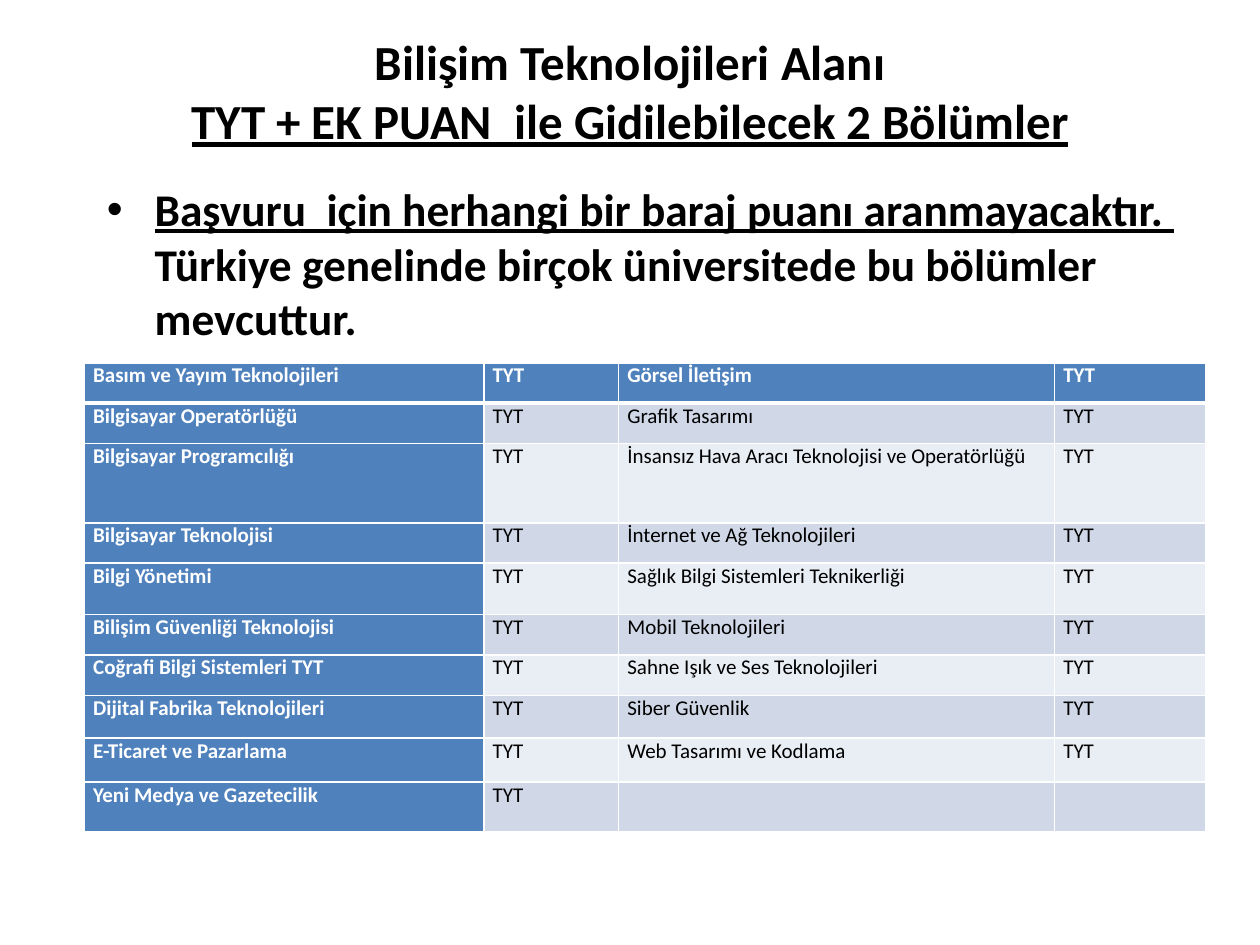
from lxml import etree
from pptx import Presentation, util as u
from pptx.dml.color import RGBColor
from pptx.enum import text
from pptx.oxml.ns import qn

# Content
TITLE = [("Bilişim Teknolojileri Alanı", False),
         ("TYT + EK PUAN  ile Gidilebilecek 2 Bölümler", True)]
NOTICE = [("Başvuru  için herhangi bir baraj puanı aranmayacaktır. ", True),
          ("Türkiye genelinde birçok üniversitede bu bölümler mevcuttur.", False)]
SCORE = "TYT"
PROGRAMS = [
    ("Basım ve Yayım Teknolojileri", "Görsel İletişim"),
    ("Bilgisayar Operatörlüğü", "Grafik Tasarımı"),
    ("Bilgisayar Programcılığı", "İnsansız Hava Aracı Teknolojisi ve Operatörlüğü"),
    ("Bilgisayar Teknolojisi", "İnternet ve Ağ Teknolojileri"),
    ("Bilgi Yönetimi", "Sağlık Bilgi Sistemleri Teknikerliği"),
    ("Bilişim Güvenliği Teknolojisi", "Mobil Teknolojileri"),
    ("Coğrafi Bilgi Sistemleri TYT", "Sahne Işık ve Ses Teknolojileri"),
    ("Dijital Fabrika Teknolojileri", "Siber Güvenlik"),
    ("E-Ticaret ve Pazarlama", "Web Tasarımı ve Kodlama"),
    ("Yeni Medya ve Gazetecilik", ""),
]

# Format and grid, in inches
COLORS = {"ink": "000000", "paper": "FFFFFF", "head": "4F81BD",
          "odd": "D0D8E8", "even": "E9EDF4"}
FONT = "Calibri"
COLUMNS = [3.17, 1.07, 3.46, 1.2]
ROWS = [0.32, 0.32, 0.63, 0.32, 0.41, 0.32, 0.32, 0.34, 0.35, 0.39]
TITLE_BOX = (0.5, 0.3, 9, 1.25)
NOTICE_BOX = (0.75, 1.39, 9, 1.53)
TABLE_BOX = (0.67, 2.88, sum(COLUMNS), sum(ROWS))


def inches(box):
    return [u.Inches(length) for length in box]


def apply(target, **formats):
    for name, value in formats.items():
        setattr(target, name, value)


def style(font, color, **formats):
    apply(font, name=FONT, **formats)
    font.color.rgb = RGBColor.from_string(COLORS[color])


def add_lines(slide, box, lines, size, **frame_formats):
    """Add a text box holding one bold paragraph with broken lines."""
    frame = slide.shapes.add_textbox(*inches(box)).text_frame
    apply(frame, word_wrap=True, **frame_formats)
    paragraph = frame.paragraphs[0]
    for i, (words, underline) in enumerate(lines):
        if i:
            paragraph.add_line_break()
        run = paragraph.add_run()
        run.text = words
        style(run.font, "ink", size=u.Pt(size), bold=True, underline=underline)
    return paragraph


def add_border(cell, side, points):
    line = etree.SubElement(cell._tc.get_or_add_tcPr(), qn(f"a:ln{side}"),
                            w=str(u.Pt(points)))
    fill = etree.SubElement(line, qn("a:solidFill"))
    etree.SubElement(fill, qn("a:srgbClr"), val=COLORS["paper"])


def fill_cell(cell, words, row, column):
    heading = row == 0 or column == 0
    apply(cell, margin_left=u.Inches(0.07), margin_right=u.Inches(0.07),
          margin_top=0, margin_bottom=0)
    # The rule under the first row is heavier
    widths = {"L": 1, "R": 1, "T": 3 if row == 1 else 1, "B": 3 if row == 0 else 1}
    for side, points in widths.items():
        add_border(cell, side, points)
    cell.fill.solid()
    band = "head" if heading else "odd" if row % 2 else "even"
    cell.fill.fore_color.rgb = RGBColor.from_string(COLORS[band])
    if words:
        run = cell.text_frame.paragraphs[0].add_run()
        run.text = words
        style(run.font, "paper" if heading else "ink", size=u.Pt(12), bold=heading)


def main():
    deck = Presentation()
    apply(deck, slide_width=u.Inches(10), slide_height=u.Inches(7.5))
    slide = deck.slides.add_slide(deck.slide_layouts[6])

    # Title, raised by a deep bottom margin
    title = add_lines(slide, TITLE_BOX, TITLE, 28, margin_bottom=u.Inches(0.46),
                      vertical_anchor=text.MSO_ANCHOR.MIDDLE)
    title.alignment = text.PP_ALIGN.CENTER

    # Bulleted notice
    notice = add_lines(slide, NOTICE_BOX, NOTICE, 25.9)
    notice.space_before = u.Pt(5)
    indent = u.Inches(0.38)
    layout = notice._p.get_or_add_pPr()
    layout.set("marL", str(indent))
    layout.set("indent", str(-indent))
    etree.SubElement(layout, qn("a:buFont"), typeface="Arial")
    etree.SubElement(layout, qn("a:buChar"), char="•")

    # Program table
    programs = slide.shapes.add_table(len(ROWS), len(COLUMNS), *inches(TABLE_BOX)).table
    for column, width in zip(programs.columns, COLUMNS):
        column.width = u.Inches(width)
    for r, (height, names) in enumerate(zip(ROWS, PROGRAMS)):
        programs.rows[r].height = u.Inches(height)
        entries = [words for name in names for words in (name, SCORE if name else "")]
        for c, words in enumerate(entries):
            fill_cell(programs.cell(r, c), words, r, c)

    deck.save("out.pptx")


if __name__ == "__main__":
    main()
